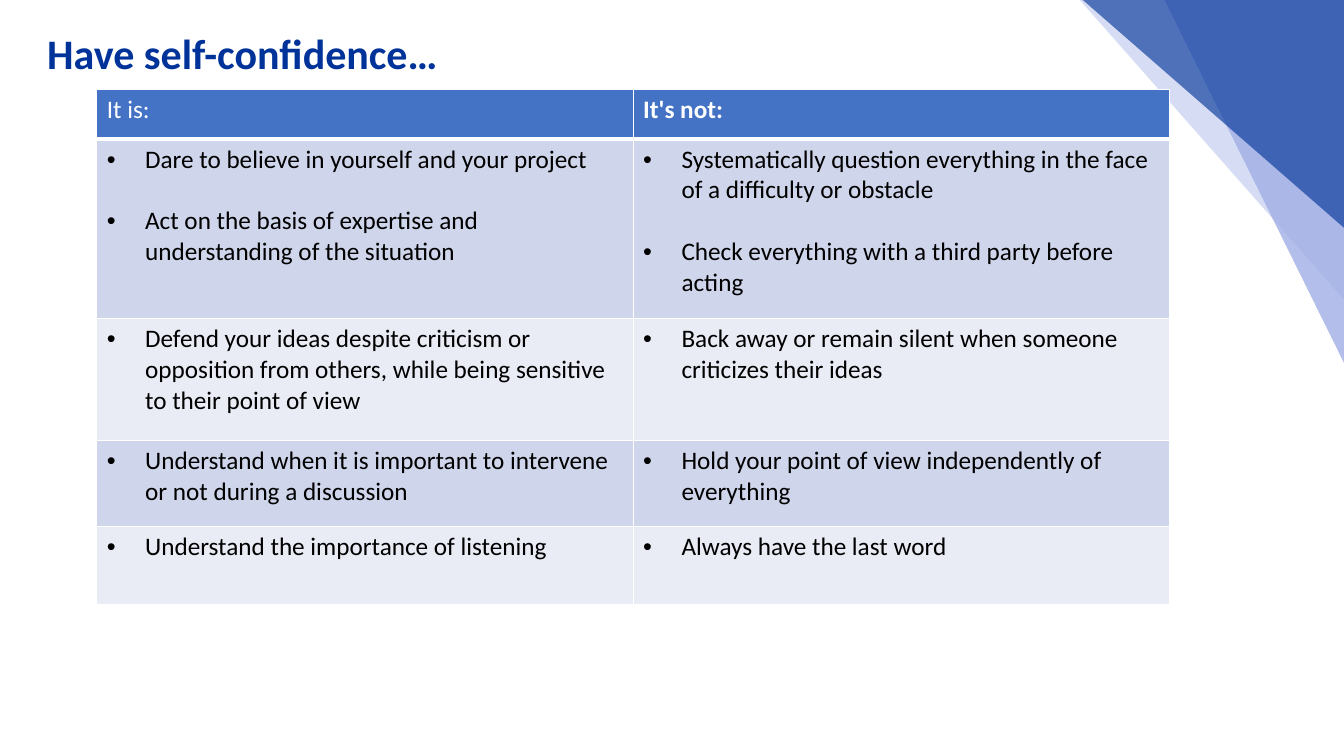
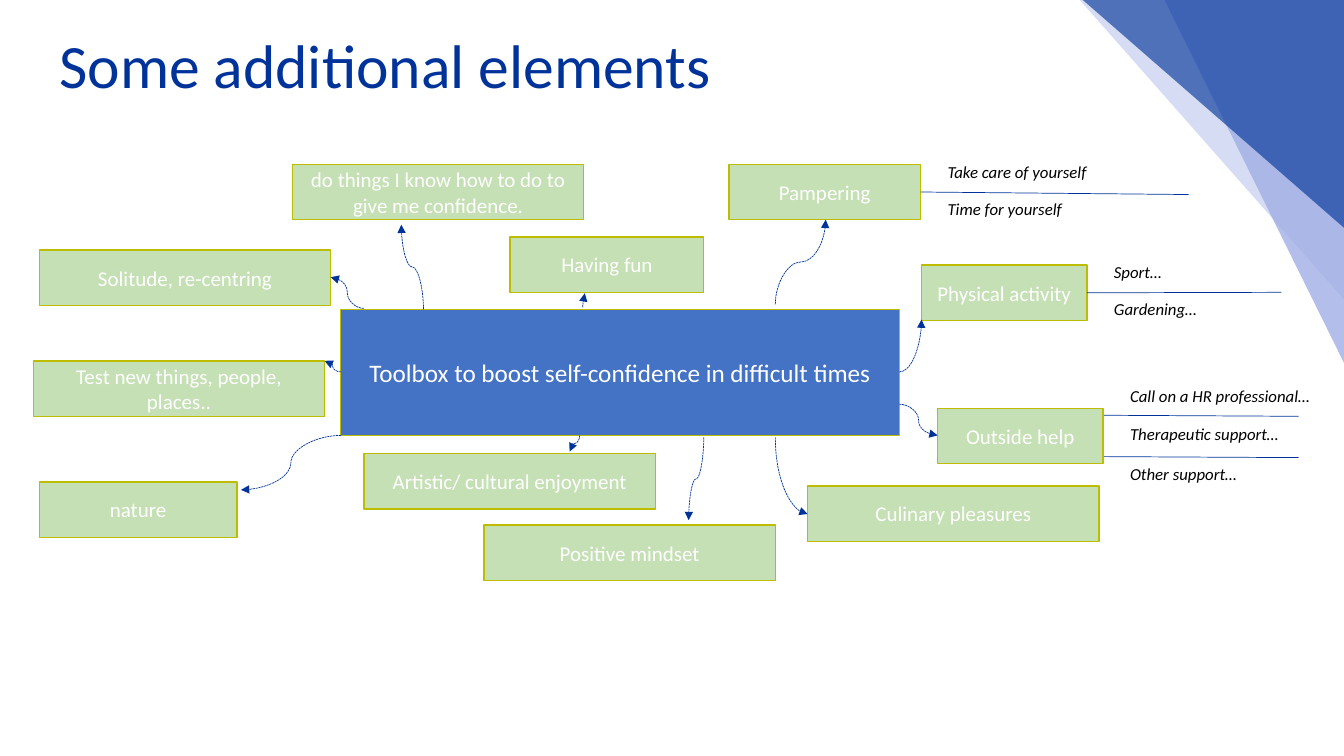
from dataclasses import dataclass
from typing import Optional

from lxml import etree
from pptx import Presentation
from pptx.dml.color import RGBColor
from pptx.enum.dml import MSO_LINE
from pptx.enum.shapes import MSO_CONNECTOR, MSO_SHAPE
from pptx.enum.text import MSO_ANCHOR, PP_ALIGN
from pptx.oxml.ns import qn
from pptx.util import Inches, Pt

NAVY = RGBColor(0x00, 0x33, 0x99)
PALE_BLUE = RGBColor(0xC5, 0xCE, 0xEF)
MID_BLUE = RGBColor(0x9F, 0xAE, 0xE5)
BLUE = RGBColor(0x44, 0x72, 0xC4)
BAND_DARK = RGBColor(0xCF, 0xD5, 0xEA)
BAND_LIGHT = RGBColor(0xE9, 0xEB, 0xF5)
GREEN = RGBColor(0xC5, 0xE0, 0xB4)
OLIVE = RGBColor(0xBD, 0xBD, 0x00)
WHITE = RGBColor(0xFF, 0xFF, 0xFF)
BLACK = RGBColor(0x00, 0x00, 0x00)

SLIDE_W, SLIDE_H = 13.33, 7.5
BOX_H = 0.55
Point = tuple[float, float]


@dataclass(frozen=True)
class Triangle:
    width: float
    height: float
    color: RGBColor
    opacity: int


@dataclass(frozen=True)
class Box:
    text: str
    left: float
    top: float
    width: float = 2.89


@dataclass(frozen=True)
class Note:
    text: str
    left: float
    top: float


@dataclass(frozen=True)
class Rule:
    start: Point
    end: Point
    box: Optional[str] = None


@dataclass(frozen=True)
class Curve:
    start: Point
    end: Point
    vertical: bool = False
    quarter: bool = False


TRIANGLES = [
    Triangle(2.62, 2.97, PALE_BLUE, 71),
    Triangle(1.78, 3.6, MID_BLUE, 79),
    Triangle(2.59, 2.26, NAVY, 63),
]

ROW_HEIGHTS = [0.49, 1.78, 1.21, 0.85, 0.78]
HEADERS = ["It is:", "It's not:"]
ROWS = [
    (["Dare to believe in yourself and your project",
      "Act on the basis of expertise and understanding of the situation"],
     ["Systematically question everything in the face of a difficulty or obstacle",
      "Check everything with a third party before acting"]),
    (["Defend your ideas despite criticism or opposition from others, "
      "while being sensitive to their point of view"],
     ["Back away or remain silent when someone criticizes their ideas"]),
    (["Understand when it is important to intervene or not during a discussion"],
     ["Hold your point of view independently of everything"]),
    (["Understand the importance of listening"], ["Always have the last word"]),
]

BOXES = [
    Box("do things I know how to do to give me confidence.", 2.9, 1.63),
    Box("Having fun", 5.06, 2.35, 1.92),
    Box("Pampering", 7.23, 1.63, 1.9),
    Box("Physical activity", 9.14, 2.63, 1.64),
    Box("Outside help", 9.3, 4.05, 1.64),
    Box("Culinary pleasures", 8.01, 4.82),
    Box("Positive mindset", 4.8, 5.21),
    Box("Artistic/ cultural enjoyment", 3.61, 4.5),
    Box("nature", 0.39, 4.78, 1.96),
    Box("Test new things, people, places..", 0.33, 3.58),
    Box("Solitude, re-centring", 0.39, 2.48),
]
NOTES = [
    Note("Take care of yourself", 9.3, 1.56),
    Note("Time for yourself", 9.3, 1.92),
    Note("Sport…", 10.95, 2.55),
    Note("Gardening…", 10.95, 2.91),
    Note("Call on a HR professional…", 11.11, 3.78),
    Note("Therapeutic support…", 11.11, 4.15),
    Note("Other support…", 11.11, 4.55),
]
RULES = [
    Rule((9.13, 1.9), (11.79, 1.93), "Pampering"),
    Rule((10.78, 2.9), (12.71, 2.9), "Physical activity"),
    Rule((10.95, 4.12), (12.88, 4.13)),
    Rule((10.95, 4.53), (12.88, 4.54)),
]
CURVES = [
    Curve((4.2, 3.07), (3.98, 2.23), vertical=True),
    Curve((5.78, 3.05), (5.8, 2.91), vertical=True),
    Curve((7.69, 3.02), (8.19, 2.18), vertical=True),
    Curve((8.92, 3.69), (9.14, 3.17), quarter=True),
    Curve((8.92, 4.01), (9.3, 4.32)),
    Curve((7.69, 4.34), (8.01, 5.1), vertical=True, quarter=True),
    Curve((6.98, 4.34), (6.83, 5.16), vertical=True),
    Curve((5.75, 4.32), (5.65, 4.48), vertical=True),
    Curve((3.38, 4.32), (2.39, 4.86)),
    Curve((3.38, 3.69), (3.22, 3.58)),
    Curve((3.61, 3.06), (3.28, 2.75)),
]


def write(p, text: str, size: float, color: RGBColor, **formats) -> None:
    r = p.add_run()
    r.text = text
    for name, value in {"name": "Calibri", "size": Pt(size), **formats}.items():
        setattr(r.font, name, value)
    r.font.color.rgb = color


def set_fill(sp, color: RGBColor) -> None:
    sp.fill.solid()
    sp.fill.fore_color.rgb = color


def add_triangle(slide, tri: Triangle) -> None:
    sp = slide.shapes.add_shape(
        MSO_SHAPE.ISOSCELES_TRIANGLE, Inches(SLIDE_W - tri.width), 0,
        Inches(tri.width), Inches(tri.height))
    sp.adjustments[0] = 0
    sp.rotation = 180
    sp.shadow.inherit = False
    sp.line.fill.background()
    set_fill(sp, tri.color)
    color = next(sp.element.spPr.iter(qn("a:srgbClr")))
    etree.SubElement(color, qn("a:alpha"), val=str(tri.opacity * 1000))


def add_titled_slide(prs, title: str, left: float, top: float, height: float,
                     size: float, bold: bool = False):
    slide = prs.slides.add_slide(prs.slide_layouts[6])
    for tri in TRIANGLES:
        add_triangle(slide, tri)
    tf = slide.shapes.add_textbox(
        Inches(left), Inches(top), Inches(11.5), Inches(height)).text_frame
    tf.word_wrap = True
    tf.vertical_anchor = MSO_ANCHOR.MIDDLE
    p = tf.paragraphs[0]
    p.line_spacing = 0.9
    write(p, title, size, NAVY, bold=bold)
    return slide


def set_borders(cell, top: float, bottom: float) -> None:
    tcPr = cell._tc.get_or_add_tcPr()
    for i, (side, width) in enumerate(
            {"L": 1, "R": 1, "T": top, "B": bottom}.items()):
        ln = etree.Element(qn(f"a:ln{side}"), w=str(Pt(width)))
        fill = etree.SubElement(ln, qn("a:solidFill"))
        etree.SubElement(fill, qn("a:srgbClr"), val=str(WHITE))
        tcPr.insert(i, ln)


def add_bullets(tf, texts: list[str]) -> None:
    for i, text in enumerate(texts):
        p = tf.add_paragraph() if i else tf.paragraphs[0]
        pPr = p._p.get_or_add_pPr()
        pPr.set("marL", str(Inches(0.38)))
        pPr.set("indent", str(Inches(-0.38)))
        etree.SubElement(pPr, qn("a:buFont"), typeface="Arial")
        etree.SubElement(pPr, qn("a:buChar"), char="•")
        if i:
            p.space_before = Pt(22)
        write(p, text, 18, BLACK, bold=False)


def add_comparison(slide) -> None:
    table = slide.shapes.add_table(
        len(ROW_HEIGHTS), len(HEADERS), Inches(0.96), Inches(0.89),
        Inches(10.64), Inches(sum(ROW_HEIGHTS))).table
    for row, height in zip(table.rows, ROW_HEIGHTS):
        row.height = Inches(height)
    for c, header in enumerate(HEADERS):
        cell = table.cell(0, c)
        set_fill(cell, BLUE)
        set_borders(cell, 1, 3)
        write(cell.text_frame.paragraphs[0], header, 18, WHITE, bold=c == 1)
    for n, row in enumerate(ROWS, start=1):
        for c, texts in enumerate(row):
            cell = table.cell(n, c)
            set_fill(cell, BAND_DARK if n % 2 else BAND_LIGHT)
            set_borders(cell, 3 if n == 1 else 1, 1)
            add_bullets(cell.text_frame, texts)


def add_box(slide, box: Box, height: float = BOX_H,
            color: RGBColor = GREEN, size: float = 15):
    sp = slide.shapes.add_shape(
        MSO_SHAPE.RECTANGLE, Inches(box.left), Inches(box.top),
        Inches(box.width), Inches(height))
    sp.shadow.inherit = False
    set_fill(sp, color)
    sp.line.color.rgb = OLIVE
    sp.line.width = Pt(1)
    tf = sp.text_frame
    tf.word_wrap = True
    tf.vertical_anchor = MSO_ANCHOR.MIDDLE
    p = tf.paragraphs[0]
    p.alignment = PP_ALIGN.CENTER
    write(p, box.text, size, WHITE)
    return sp


def add_note(slide, note: Note) -> None:
    tf = slide.shapes.add_textbox(
        Inches(note.left), Inches(note.top), Inches(2.04), Inches(0.3)).text_frame
    tf.word_wrap = False
    write(tf.paragraphs[0], note.text, 12, BLACK, italic=True)


def add_line(slide, kind: MSO_CONNECTOR, start: Point, end: Point):
    line = slide.shapes.add_connector(kind, *map(Inches, start + end))
    line.line.color.rgb = NAVY
    line.line.width = Pt(0.5)
    etree.SubElement(line.element.spPr, qn("a:effectLst"))
    return line


def add_curve(slide, curve: Curve) -> None:
    line = add_line(slide, MSO_CONNECTOR.CURVE, curve.start, curve.end)
    line.line.dash_style = MSO_LINE.SQUARE_DOT
    etree.SubElement(line.get_or_add_ln(), qn("a:tailEnd"), type="triangle")
    spPr = line.element.spPr
    if curve.quarter:
        spPr.find(qn("a:prstGeom")).set("prst", "curvedConnector2")
    if curve.vertical:
        (x1, y1), (x2, y2) = curve.start, curve.end
        dx, dy = x2 - x1, y2 - y1
        width, height = abs(dy), abs(dx)
        frame = {"left": (x1 + x2 - width) / 2, "top": (y1 + y2 - height) / 2,
                 "width": width, "height": height}
        for name, value in frame.items():
            setattr(line, name, Inches(value))
        xfrm = spPr.find(qn("a:xfrm"))
        xfrm.set("rot", str((270 if dx * dy > 0 else 90) * 60000))
        xfrm.set("flipH", str(int(dx > 0)))
        xfrm.set("flipV", str(int(dy < 0)))


def add_toolbox(slide) -> None:
    hub = Box("Toolbox to boost self-confidence in difficult times", 3.38, 3.07, 5.54)
    add_box(slide, hub, 1.25, BLUE, 18)
    shapes = {box.text: add_box(slide, box) for box in BOXES}
    for rule in RULES:
        line = add_line(slide, MSO_CONNECTOR.STRAIGHT, rule.start, rule.end)
        if rule.box:
            line.begin_connect(shapes[rule.box], 3)
    for note in NOTES:
        add_note(slide, note)
    for curve in CURVES:
        add_curve(slide, curve)


def main() -> None:
    prs = Presentation()
    prs.slide_width, prs.slide_height = Inches(SLIDE_W), Inches(SLIDE_H)
    add_comparison(add_titled_slide(
        prs, "Have self-confidence…", 0.37, 0.1, 0.9, 30, bold=True))
    add_toolbox(add_titled_slide(
        prs, "Some additional elements", 0.49, -0.05, 1.45, 44))
    prs.save("out.pptx")


if __name__ == "__main__":
    main()
